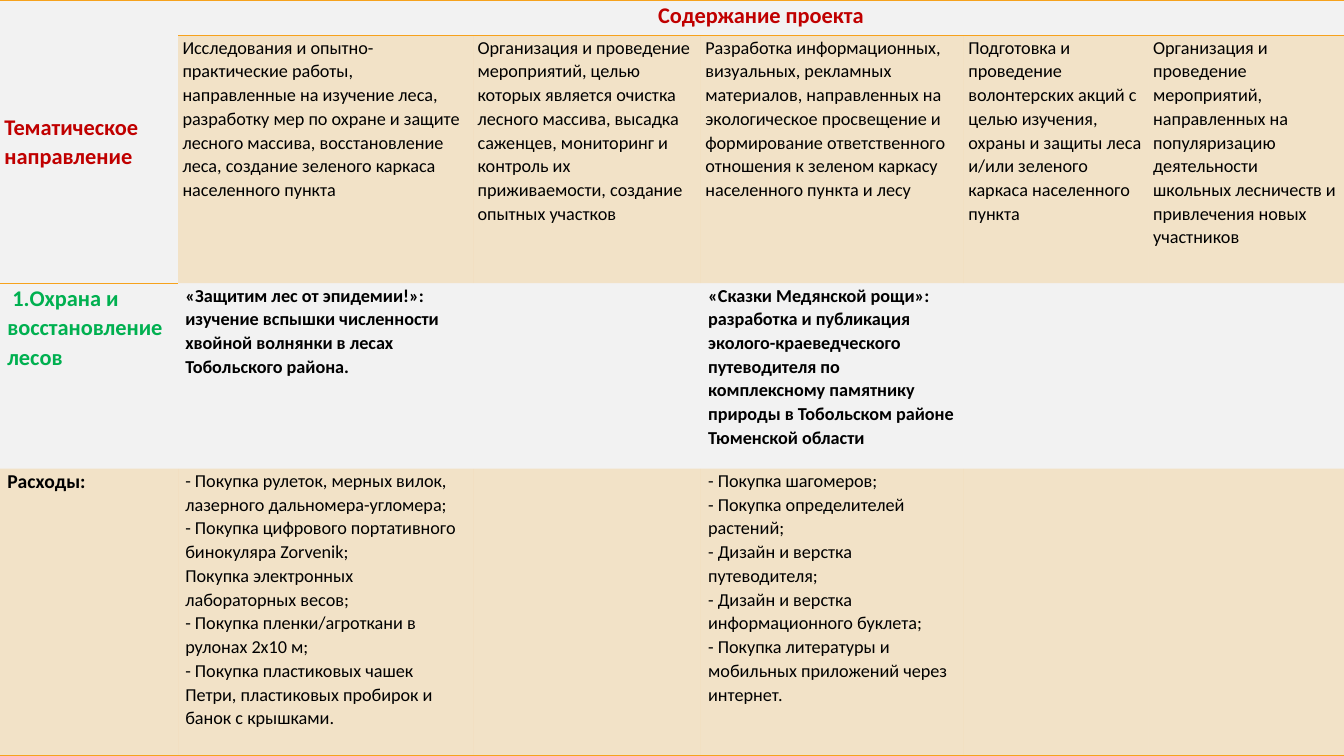
from dataclasses import dataclass

from lxml.etree import SubElement
from pptx import Presentation
from pptx.dml.color import RGBColor as RGB
from pptx.enum.text import MSO_ANCHOR as Anchor, PP_ALIGN as Align
from pptx.oxml.ns import qn
from pptx.util import Pt


@dataclass(frozen=True)
class Theme:
    font: str = "Calibri"
    background: str = "F2F2F2"
    accent: str = "F6A21D"
    red: str = "C00000"
    green: str = "00B050"
    black: str = "000000"
    heading: int = 16
    label: int = 14
    body: int = 13
    tint: int = 20
    border: int = 1
    spacing: float = 1.07
    plain_table: str = "{2D5ABB26-0587-4C30-8999-92F81FD0307C}"


THEME = Theme()
COLUMNS = [127.2, 210.8, 162.7, 187.9, 132, 139.4]
ROWS = [25.2, 177.1, 132.5, 205.2]
NARROW, WIDE = 3.2, 5.2

ACTIVITIES = [
    "Исследования и опытно-практические работы, направленные на изучение леса, "
    "разработку мер по охране и защите лесного массива, восстановление леса, "
    "создание зеленого каркаса населенного пункта",
    "Организация и проведение мероприятий, целью которых является очистка лесного "
    "массива, высадка саженцев, мониторинг и контроль их приживаемости, создание "
    "опытных участков",
    "Разработка информационных, визуальных, рекламных материалов, направленных на "
    "экологическое просвещение и формирование ответственного отношения к зеленом "
    "каркасу населенного пункта и лесу",
    "Подготовка и проведение волонтерских акций с целью изучения, охраны и защиты "
    "леса и/или зеленого каркаса населенного пункта",
    "Организация и проведение мероприятий, направленных на популяризацию деятельности "
    "школьных лесничеств и привлечения новых участников",
]
PROJECTS = {
    1: "«Защитим лес от эпидемии!»: изучение вспышки численности хвойной волнянки "
       "в лесах Тобольского района.",
    3: "«Сказки Медянской рощи»: разработка и публикация эколого-краеведческого "
       "путеводителя по комплексному памятнику природы в Тобольском районе "
       "Тюменской области",
}
EXPENSES = {
    1: [
        "- Покупка рулеток, мерных вилок, лазерного дальномера-угломера;",
        "- Покупка цифрового портативного бинокуляра Zorvenik;",
        "Покупка электронных лабораторных весов;",
        "- Покупка пленки/агроткани в рулонах 2х10 м;",
        "- Покупка пластиковых чашек Петри, пластиковых пробирок и банок с крышками.",
    ],
    3: [
        "- Покупка шагомеров;",
        "- Покупка определителей растений;",
        "- Дизайн и верстка путеводителя;",
        "- Дизайн и верстка информационного буклета;",
        "- Покупка литературы и мобильных приложений через интернет.",
    ],
}


def add_plain_table(slide):
    frame = slide.shapes.add_table(
        len(ROWS), len(COLUMNS), 0, 0, Pt(sum(COLUMNS)), Pt(sum(ROWS)))
    table = frame.table
    table.first_row = table.horz_banding = False
    table._tbl.tblPr.find(qn("a:tableStyleId")).text = THEME.plain_table
    for column, width in zip(table.columns, COLUMNS):
        column.width = Pt(width)
    for row, height in zip(table.rows, ROWS):
        row.height = Pt(height)
    return table


def write(cell, lines, size, color=THEME.black, bold=False, inset=WIDE, align=Align.LEFT):
    cell.margin_left = cell.margin_right = Pt(inset)
    cell.margin_top = cell.margin_bottom = 0
    tf = cell.text_frame
    tf.text = "\n".join(lines)
    for p in tf.paragraphs:
        p.alignment = align
        p.line_spacing = THEME.spacing
        for r in p.runs:
            r.font.name = THEME.font
            r.font.size = Pt(size)
            r.font.bold = bold
            r.font.color.rgb = RGB.from_string(color)


def add_border(cell, side):
    tcPr = cell._tc.get_or_add_tcPr()
    ln = SubElement(tcPr, qn(f"a:ln{side}"), w=str(Pt(THEME.border)))
    fill = SubElement(ln, qn("a:solidFill"))
    SubElement(fill, qn("a:srgbClr"), val=THEME.accent)


def add_tint(cell):
    cell.fill.solid()
    cell.fill.fore_color.rgb = RGB.from_string(THEME.accent)
    color = cell._tc.tcPr.find(qn("a:solidFill")).find(qn("a:srgbClr"))
    SubElement(color, qn("a:alpha"), val=str(THEME.tint * 1000))


def style_cells(table):
    last = len(ROWS) - 1
    for row in range(len(ROWS)):
        for col in range(len(COLUMNS)):
            cell = table.cell(row, col)
            if row == 0:
                add_border(cell, "T")
            if row == last or (row == 0 and col > 0) or (row < 2 and col == 0):
                add_border(cell, "B")
            if row == last or (row == 1 and col > 0):
                add_tint(cell)
            else:
                cell.fill.background()


def fill_header(table):
    topic, content = table.cell(0, 0), table.cell(0, 1)
    topic.merge(table.cell(1, 0))
    content.merge(table.cell(0, len(COLUMNS) - 1))
    write(topic, ["Тематическое направление"], THEME.heading, THEME.red, True, NARROW)
    topic.vertical_anchor = Anchor.MIDDLE
    write(content, ["Содержание проекта"], THEME.heading, THEME.red, True, NARROW, Align.CENTER)
    for col, activity in enumerate(ACTIVITIES, 1):
        write(table.cell(1, col), [activity], THEME.body, inset=NARROW)


def fill_body(table):
    write(table.cell(2, 0), [" 1.Охрана и восстановление лесов"],
          THEME.heading, THEME.green, True)
    write(table.cell(3, 0), ["Расходы:"], THEME.label, bold=True)
    for col, project in PROJECTS.items():
        write(table.cell(2, col), [project], THEME.body, bold=True)
        write(table.cell(3, col), EXPENSES[col], THEME.body)


def main():
    prs = Presentation()
    prs.slide_width, prs.slide_height = Pt(960), Pt(540)
    slide = prs.slides.add_slide(prs.slide_layouts[6])
    slide.background.fill.solid()
    slide.background.fill.fore_color.rgb = RGB.from_string(THEME.background)
    table = add_plain_table(slide)
    style_cells(table)
    fill_header(table)
    fill_body(table)
    prs.save("out.pptx")


if __name__ == "__main__":
    main()
